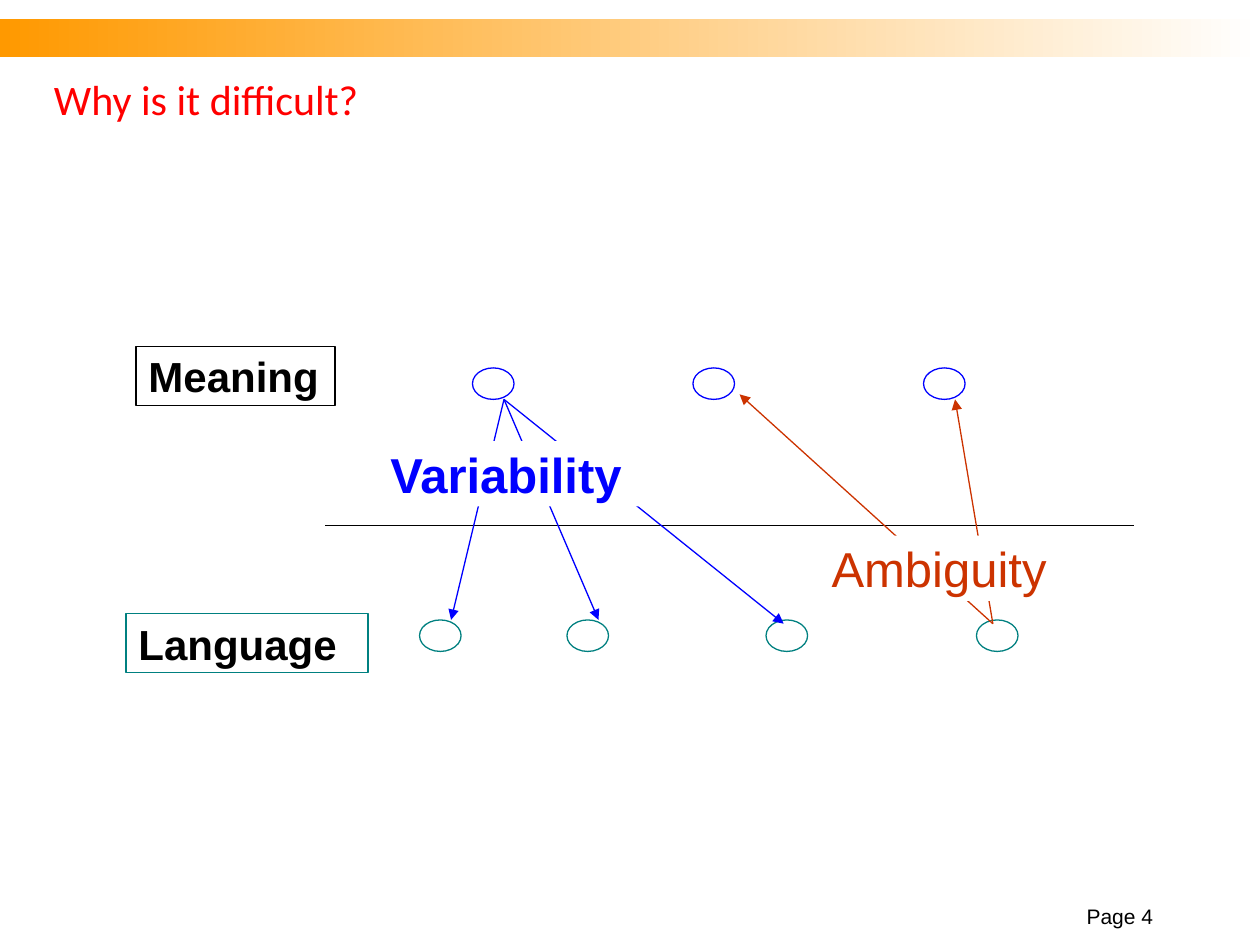
from dataclasses import dataclass
from lxml.etree import SubElement
from pptx import Presentation
from pptx.dml.color import RGBColor
from pptx.enum.shapes import MSO_CONNECTOR, MSO_SHAPE
from pptx.enum.text import MSO_ANCHOR, PP_ALIGN
from pptx.oxml.ns import qn
from pptx.util import Inches, Pt


@dataclass(frozen=True)
class Theme:
    black: str = "000000"
    white: str = "FFFFFF"
    red: str = "FF0000"
    blue: str = "0000FF"
    teal: str = "008080"
    rust: str = "CC3300"
    gold: str = "FF9900"
    head: str = "Calibri"
    body: str = "Arial"
    small: int = 12
    large: int = 24
    huge: int = 28
    rule: float = 0.75


T = Theme()


def rgb(code):
    return RGBColor.from_string(code)


def place(box):
    return [Inches(v) for v in box]


def add_shape(shapes, kind, box, line=None, fill=None):
    shape = shapes.add_shape(kind, *place(box))
    shape.shadow.inherit = False
    if fill:
        shape.fill.solid()
        shape.fill.fore_color.rgb = rgb(fill)
    else:
        shape.fill.background()
    if line:
        shape.line.color.rgb = rgb(line)
        shape.line.width = Pt(T.rule)
    else:
        shape.line.fill.background()
    return shape


def write(shape, text, size, color, font=T.body, bold=False,
          align=PP_ALIGN.LEFT, anchor=MSO_ANCHOR.MIDDLE, wrap=True):
    frame = shape.text_frame
    frame.word_wrap = wrap
    frame.vertical_anchor = anchor
    para = frame.paragraphs[0]
    para.alignment = align
    run = para.add_run()
    run.text = text
    run.font.name = font
    run.font.size = Pt(size)
    run.font.bold = bold
    run.font.color.rgb = rgb(color)
    return frame


def add_line(shapes, start, end, color, arrow=False):
    line = shapes.add_connector(MSO_CONNECTOR.STRAIGHT, *place(start + end))
    line.line.color.rgb = rgb(color)
    line.line.width = Pt(T.rule)
    if arrow:
        SubElement(line.line._get_or_add_ln(), qn("a:tailEnd"), type="triangle")
    SubElement(line._element.spPr, qn("a:effectLst"))


def add_head(slide, box):
    """Gradient band with the title below it."""
    left, top, width, height = box
    band = add_shape(slide.shapes, MSO_SHAPE.RECTANGLE, (left, top, width, 0.3))
    band.fill.gradient()
    band.fill.gradient_angle = 0
    for stop, color, spot in zip(band.fill.gradient_stops, (T.gold, T.white), (0, 1)):
        stop.color.rgb = rgb(color)
        stop.position = spot
    title = slide.shapes.add_textbox(
        *place((left + 0.33, top + 0.24, 8.87, height - 0.24)))
    write(title, "Why is it difficult?", T.large, T.red, T.head)


def add_level(slide, box, text, width, line, color, nodes, drop):
    """Framed level name with a row of nodes to its right."""
    left, top, _, height = box
    label = add_shape(slide.shapes, MSO_SHAPE.RECTANGLE,
                      (left, top, width, height), line)
    write(label, text, T.large, T.black, bold=True)
    for x in nodes:
        add_shape(slide.shapes, MSO_SHAPE.OVAL,
                  (x, top + drop, 0.33, 0.25), color)


def add_fan(slide, box, text, color, start, ends, bold=False, wrap=True):
    """Arrows from one node, with their name laid over them."""
    shapes = slide.shapes.add_group_shape().shapes
    for end in ends:
        add_line(shapes, start, end, color, arrow=True)
    label = add_shape(shapes, MSO_SHAPE.RECTANGLE, box, fill=T.white)
    frame = write(label, text, T.huge, color, bold=bold, wrap=wrap)
    if not wrap:
        frame.margin_left = frame.margin_right = 0


def add_foot(slide, box):
    """Page number."""
    page = slide.shapes.add_textbox(*place(box))
    write(page, "Page 4", T.small, T.black, align=PP_ALIGN.RIGHT,
          anchor=MSO_ANCHOR.BOTTOM)


def main():
    deck = Presentation()
    deck.slide_width, deck.slide_height = Inches(10), Inches(7.5)
    slide = deck.slides.add_slide(deck.slide_layouts[6])

    add_head(slide, (0, 0.15, 10, 1.02))

    # Two levels and the line between them
    add_line(slide.shapes, (2.58, 4.17), (9, 4.17), T.black)
    add_level(slide, (1.08, 2.75, 6.58, 0.47), "Meaning", 1.58,
              T.black, T.blue, (3.75, 5.5, 7.33), 0.17)
    add_level(slide, (1, 4.87, 7.08, 0.47), "Language", 1.92,
              T.teal, T.teal, (3.33, 4.5, 6.08, 7.75), 0.05)

    # Links between the levels
    add_fan(slide, (6.6, 4.25, 1.71, 0.52), "Ambiguity", T.rust,
            (7.88, 4.95), ((5.87, 3.13), (7.58, 3.17)), wrap=False)
    add_fan(slide, (3, 3.5, 2.75, 0.52), "Variability", T.blue,
            (4, 3.17), ((4.75, 4.92), (3.58, 4.92), (6.22, 4.95)), bold=True)

    add_foot(slide, (8.25, 7.17, 1, 0.25))
    deck.save("out.pptx")


if __name__ == "__main__":
    main()
